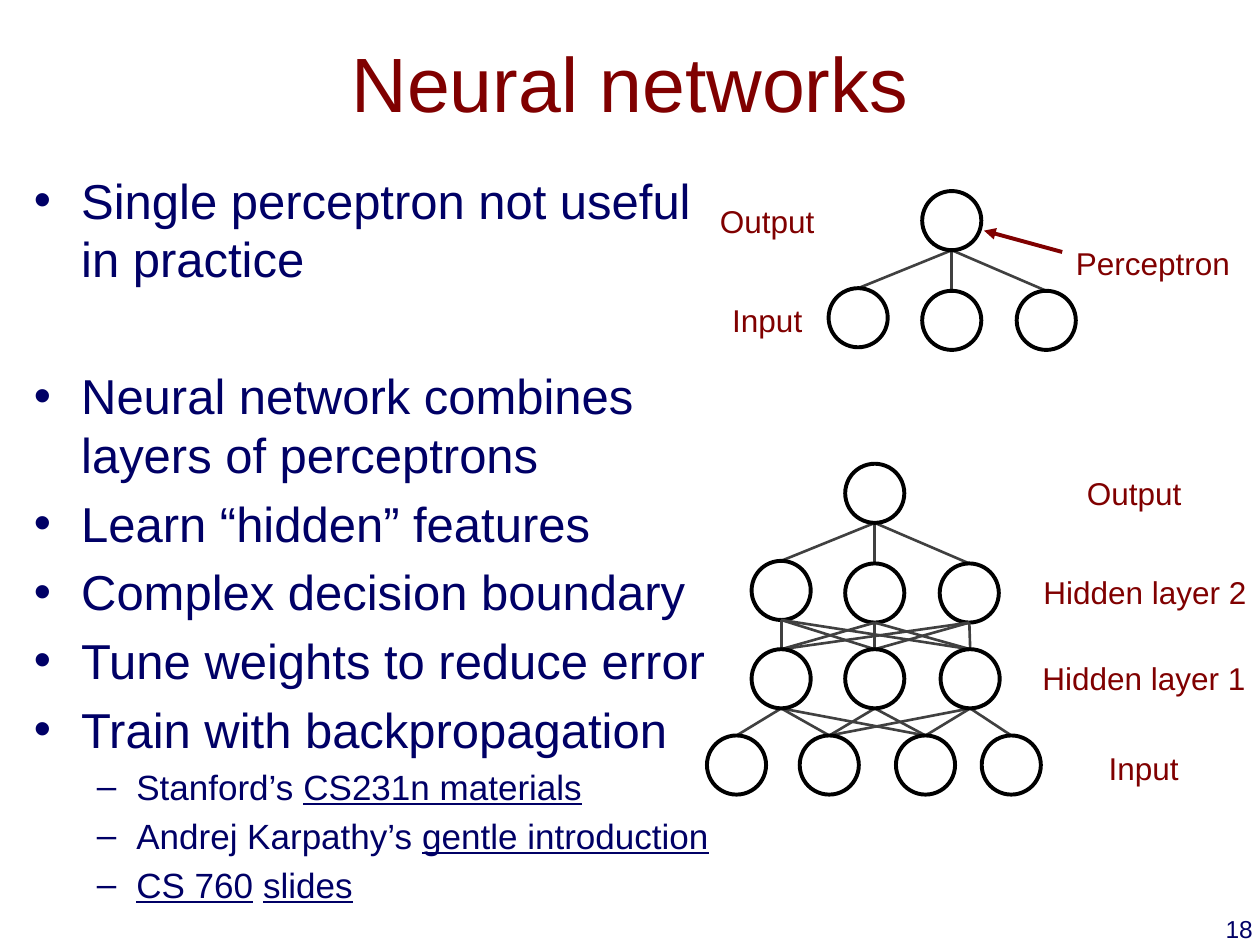
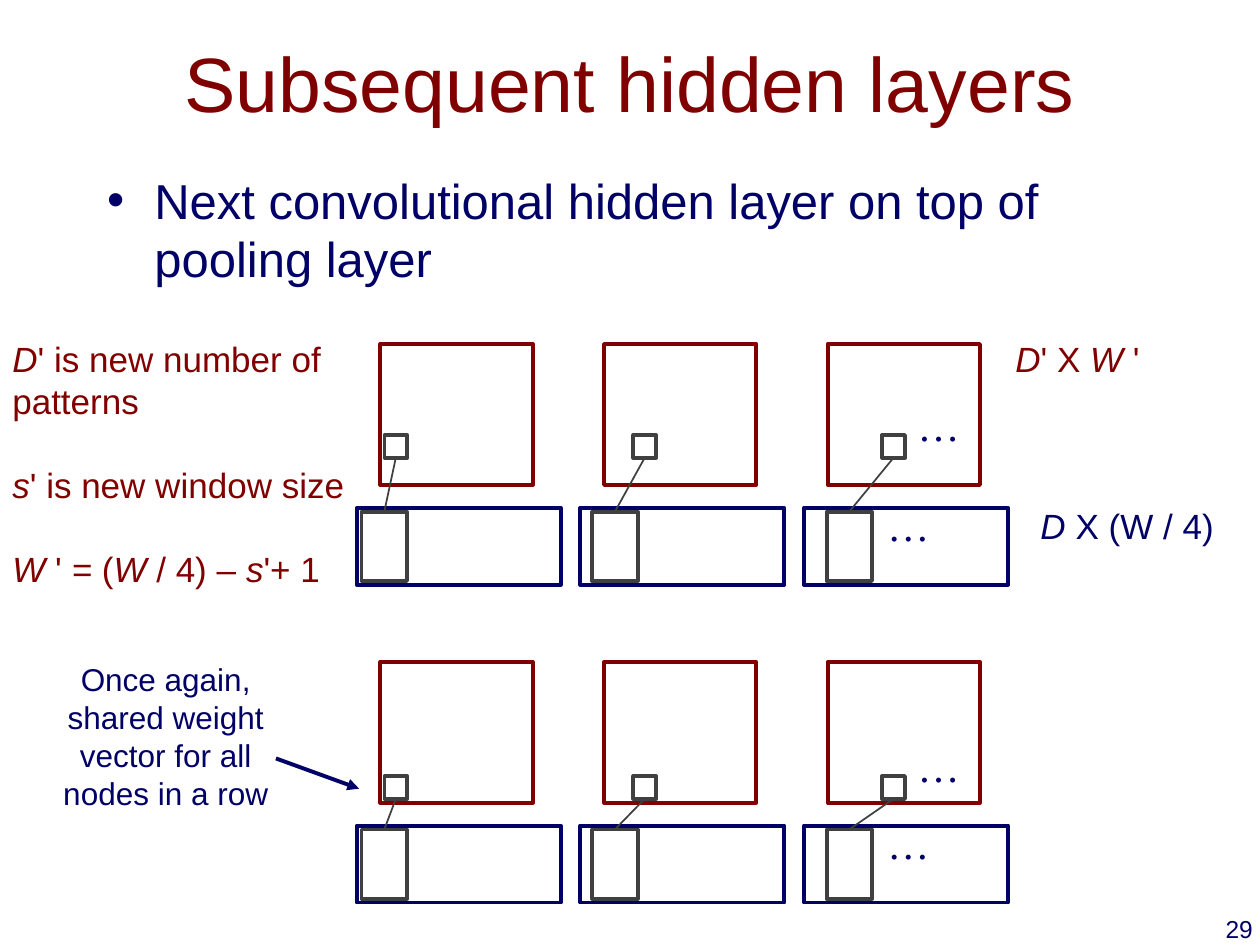
from lxml.etree import SubElement
from pptx import Presentation
from pptx.dml.color import RGBColor
from pptx.enum.shapes import MSO_CONNECTOR as CXN, MSO_SHAPE as SHAPE
from pptx.enum.text import MSO_ANCHOR as ANCHOR, MSO_AUTO_SIZE as AUTO, PP_ALIGN as AL
from pptx.oxml.ns import qn
from pptx.util import Pt

COLORS = {"maroon": "800000", "navy": "000066", "gray": "404040",
          "black": "000000", "white": "FFFFFF"}
FONT = "Arial"
NODE = 33.8


def rgb(name):
    return RGBColor.from_string(COLORS[name])


def place(sp, x, y, w, h):
    sp.left, sp.top, sp.width, sp.height = Pt(x), Pt(y), Pt(w), Pt(h)


def style(p, size, color, font=FONT):
    p.font.size, p.font.name = Pt(size), font
    p.font.color.rgb = rgb(color)


def add_runs(p, text, mark="italic"):
    for i, part in enumerate(text.split("*")):
        if part:
            r = p.add_run()
            r.text = part
            if i % 2:
                setattr(r.font, mark, True)


def add_text(s, text, x, y, w, h, size=18, color="maroon", align=AL.LEFT,
             wrap=True, font=FONT, gap=0):
    tf = s.shapes.add_textbox(Pt(x), Pt(y), Pt(w), Pt(h)).text_frame
    tf.word_wrap = wrap
    for i, line in enumerate(text.split("\n")):
        p = tf.add_paragraph() if i else tf.paragraphs[0]
        p.alignment = align
        if i and gap:
            p.space_before = Pt(gap)
        style(p, size, color, font)
        add_runs(p, line)


def add_outline(s, kind, x, y, w, h, line, fill=None):
    sp = s.shapes.add_shape(kind, Pt(x), Pt(y), Pt(w), Pt(h))
    sp.shadow.inherit = False
    sp.line.color.rgb, sp.line.width = rgb(line), Pt(2.25)
    if fill:
        sp.fill.solid()
        sp.fill.fore_color.rgb = rgb(fill)
    else:
        sp.fill.background()
    return sp


def add_line(s, x1, y1, x2, y2, color="gray", width=1.5, arrow=False):
    c = s.shapes.add_connector(CXN.STRAIGHT, Pt(x1), Pt(y1), Pt(x2), Pt(y2))
    c.line.color.rgb, c.line.width = rgb(color), Pt(width)
    if arrow:
        SubElement(c.line._get_or_add_ln(), qn("a:tailEnd"), type="triangle")
    SubElement(c._element.spPr, qn("a:effectLst"))
    return c


def add_slide(prs, title, number, items, x, w, h):
    s = prs.slides.add_slide(prs.slide_layouts[1])
    place(s.shapes.title, 54, 1.5, 612, 90)
    tf = s.shapes.title.text_frame
    tf.vertical_anchor = ANCHOR.MIDDLE
    p = tf.paragraphs[0]
    p.alignment = AL.CENTER
    style(p, 44, "maroon")
    add_runs(p, title)

    body = s.placeholders[1]
    place(body, x, 93.6, w, h)
    tf = body.text_frame
    tf.auto_size = AUTO.NONE
    for i, (level, text, gap) in enumerate(items):
        p = tf.add_paragraph() if i else tf.paragraphs[0]
        p.level = level
        if gap:
            p.space_before = Pt(gap)
        style(p, 20 if level else 28, "navy")
        add_runs(p, text, "underline")
    add_text(s, number, 573, 519, 150, 36, 14, "navy", AL.RIGHT)
    return s


def add_nodes(s, spots):
    for x, y in spots:
        add_outline(s, SHAPE.OVAL, x, y, NODE, NODE, "black", "white")


def link(s, upper, lower):
    add_line(s, upper[0] + NODE / 2, upper[1] + NODE, lower[0] + NODE / 2, lower[1])


def add_perceptron(s, x, y):
    inputs = [(x - 53.5, y + 55.5), (x, y + 57), (x + 54, y + 57)]
    for spot in inputs:
        link(s, (x, y), spot)
    add_nodes(s, [(x, y)] + inputs)
    return inputs


def add_deep_network(s, x, y):
    hidden2 = add_perceptron(s, x, y)
    hidden1 = [(x + dx, y + 106) for dx in (-53.5, 0, 54.5)]
    inputs = [(x + dx, y + 155.3) for dx in (-79, -26, 29, 78)]
    for upper in hidden2:
        for lower in hidden1:
            link(s, upper, lower)
    for upper, targets in zip(hidden1, ((0, 1, 2), (1, 2), (1, 2, 3))):
        for t in targets:
            link(s, upper, inputs[t])
    add_nodes(s, hidden1 + inputs)


def add_dots(s, x, y):
    add_text(s, "…", x, y, 34.6, 44, 24, "navy", font="Times New Roman")


def add_convolution(s, top, unit_top):
    row_top = top + 93.6
    for i, window_x in enumerate((206.6, 338.4, 472.3)):
        add_outline(s, SHAPE.RECTANGLE, 217.4 + 127.8 * i, top, 87, 80.5, "maroon")
        add_outline(s, SHAPE.RECTANGLE, 203.8 + 127.8 * i, row_top, 116.6, 44, "navy")
        unit = add_outline(s, SHAPE.RECTANGLE, 219.7 + 142.2 * i, unit_top, 13, 13, "gray")
        window = add_outline(s, SHAPE.RECTANGLE, window_x, row_top + 2.2, 26, 39.6, "gray")
        c = add_line(s, 0, 0, 0, 0, width=1)
        c.begin_connect(window, 0)
        c.end_connect(unit, 2)
    add_dots(s, 517.3, unit_top - 24)
    add_dots(s, 500, row_top - 8)


def add_networks_slide(prs):
    s = add_slide(prs, "Neural networks", "18", [
        (0, "Single perceptron not useful in practice", 0),
        (0, "Neural network combines layers of perceptrons", 44.6),
        (0, "Learn “hidden” features", 0),
        (0, "Complex decision boundary", 0),
        (0, "Tune weights to reduce error", 0),
        (0, "Train with backpropagation", 0),
        (1, "Stanford’s *CS231n materials*", 0),
        (1, "Andrej Karpathy’s *gentle introduction*", 0),
        (1, "*CS 760* *slides*", 0),
    ], 12.2, 404, 404.6)
    add_perceptron(s, 527, 109.2)
    add_deep_network(s, 483, 265)
    add_line(s, 607, 144, 562.3, 131.8, "maroon", 2.25, arrow=True)
    for text, x, y, w in (
        ("Perceptron", 607, 136.1, 103.7), ("Output", 403.9, 111.6, 69),
        ("Input", 411.1, 168.5, 54.7), ("Output", 613.6, 267.3, 69),
        ("Hidden layer 2", 588.6, 324, 131.4),
        ("Hidden layer 1", 588, 373, 131.4), ("Input", 626.2, 424.6, 54.7),
    ):
        add_text(s, text, x, y, w, 29, align=AL.CENTER, wrap=False)


def add_layers_slide(prs):
    s = add_slide(prs, "Subsequent hidden layers", "29", [
        (0, "Next convolutional hidden layer on top of pooling layer", 0),
    ], 54, 612, 324)
    add_convolution(s, 196.6, 248.6)
    add_convolution(s, 378.2, 443.5)
    add_text(s, "*D*' is new number of patterns\n*s*' is new window size\n"
                "*W* ' *=* (*W* / 4) – *s*'+ 1", 0, 189.4, 205, 152.6, 20, gap=24)
    add_text(s, "*D*' X *W* '", 573.1, 189.4, 93.6, 31.7, 20)
    add_text(s, "*D* X (W / 4)", 587.5, 285, 119.5, 31.7, 20, "navy", wrap=False)
    add_text(s, "Once again, shared weight vector for all nodes in a row",
             21.6, 373.7, 146.2, 94.3, 18, "navy", AL.CENTER)
    add_line(s, 157.7, 433.4, 205.2, 450.7, "navy", 2.25, arrow=True)


def main():
    prs = Presentation()
    prs.slide_width, prs.slide_height = Pt(720), Pt(540)
    add_networks_slide(prs)
    add_layers_slide(prs)
    prs.save("out.pptx")


if __name__ == "__main__":
    main()
